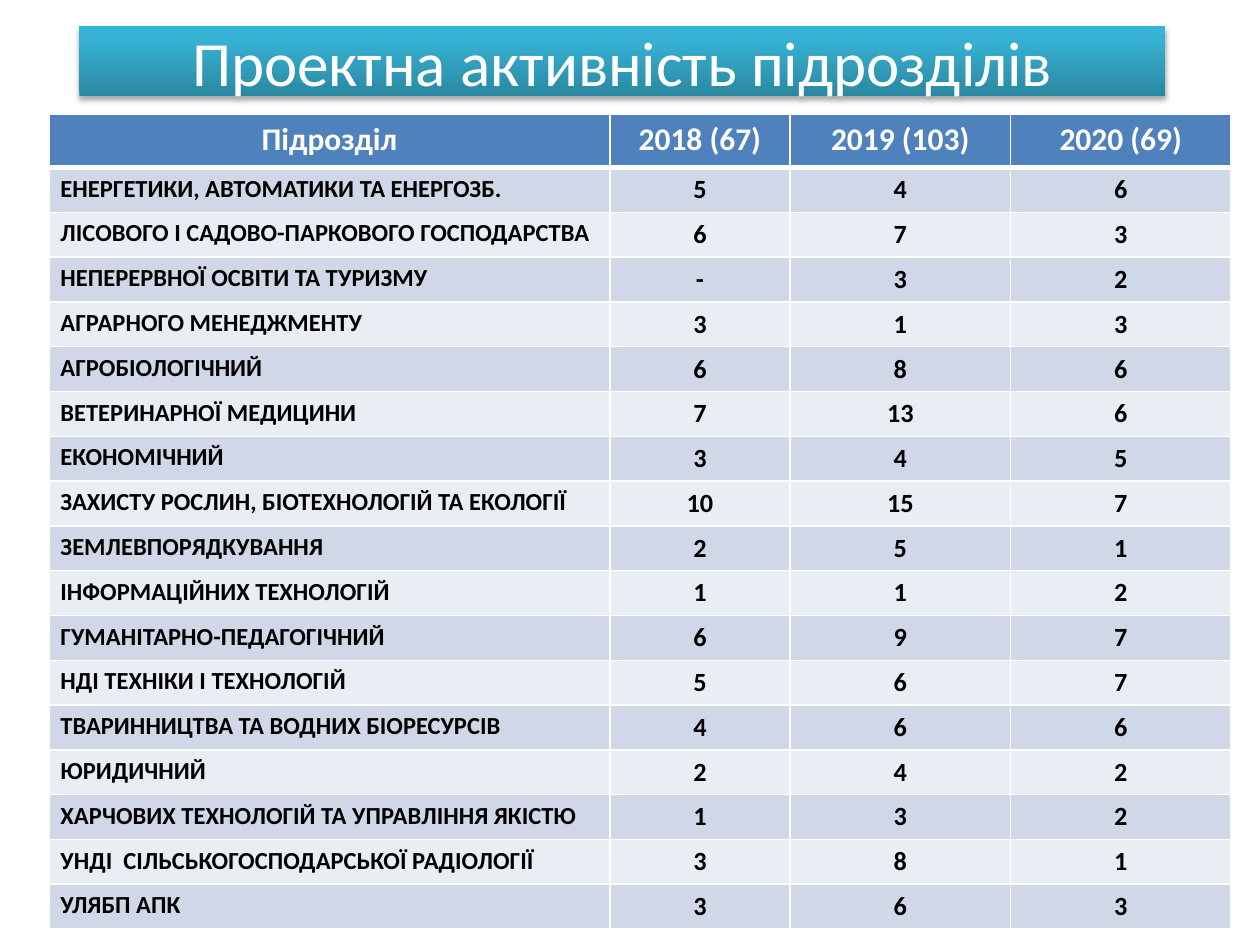
from lxml import etree
from pptx import Presentation
from pptx.dml.color import RGBColor
from pptx.enum import shapes, text
from pptx.oxml.ns import nsdecls, qn
from pptx.util import Inches, Pt

WHITE = RGBColor(0xFF, 0xFF, 0xFF)
BLACK = RGBColor(0x00, 0x00, 0x00)
HEADER = RGBColor(0x4F, 0x81, 0xBD)
BANDS = [RGBColor(0xD0, 0xD8, 0xE8), RGBColor(0xE9, 0xED, 0xF4)]
TEAL_STOPS = [
    (0, RGBColor(0x2A, 0x88, 0xA2)),
    (80, RGBColor(0x37, 0xB1, 0xD2)),
    (100, RGBColor(0x34, 0xB4, 0xD6)),
]

COLUMNS = [("Підрозділ", 4.45), ("2018 (67)", 1.43), ("2019 (103)", 1.75), ("2020 (69)", 1.75)]
UNITS = [
    ("ЕНЕРГЕТИКИ, АВТОМАТИКИ ТА ЕНЕРГОЗБ.", 5, 4, 6),
    ("ЛІСОВОГО І САДОВО-ПАРКОВОГО ГОСПОДАРСТВА", 6, 7, 3),
    ("НЕПЕРЕРВНОЇ ОСВІТИ ТА ТУРИЗМУ", "-", 3, 2),
    ("АГРАРНОГО МЕНЕДЖМЕНТУ", 3, 1, 3),
    ("АГРОБІОЛОГІЧНИЙ", 6, 8, 6),
    ("ВЕТЕРИНАРНОЇ МЕДИЦИНИ", 7, 13, 6),
    ("ЕКОНОМІЧНИЙ", 3, 4, 5),
    ("ЗАХИСТУ РОСЛИН, БІОТЕХНОЛОГІЙ ТА ЕКОЛОГІЇ", 10, 15, 7),
    ("ЗЕМЛЕВПОРЯДКУВАННЯ", 2, 5, 1),
    ("ІНФОРМАЦІЙНИХ ТЕХНОЛОГІЙ", 1, 1, 2),
    ("ГУМАНІТАРНО-ПЕДАГОГІЧНИЙ", 6, 9, 7),
    ("НДІ ТЕХНІКИ І ТЕХНОЛОГІЙ", 5, 6, 7),
    ("ТВАРИННИЦТВА ТА ВОДНИХ БІОРЕСУРСІВ", 4, 6, 6),
    ("ЮРИДИЧНИЙ", 2, 4, 2),
    ("ХАРЧОВИХ ТЕХНОЛОГІЙ ТА УПРАВЛІННЯ ЯКІСТЮ", 1, 3, 2),
    ("УНДІ  СІЛЬСЬКОГОСПОДАРСЬКОЇ РАДІОЛОГІЇ", 3, 8, 1),
    ("УЛЯБП АПК", 3, 6, 3),
]


def write(tf, content, size, color, bold=False, align=text.PP_ALIGN.CENTER):
    p = tf.paragraphs[0]
    p.alignment = align
    r = p.add_run()
    r.text = str(content)
    r.font.name = "Calibri"
    r.font.size = Pt(size)
    r.font.bold = bold
    r.font.color.rgb = color


def set_borders(cell, **widths):
    """Draw white cell borders; widths maps L, R, T, B to points."""
    tcPr = cell._tc.get_or_add_tcPr()
    for i, (side, width) in enumerate(widths.items()):
        tcPr.insert(i, etree.fromstring(
            f'<a:ln{side} {nsdecls("a")} w="{Pt(width)}"><a:solidFill>'
            f'<a:srgbClr val="{WHITE}"/></a:solidFill></a:ln{side}>'))


prs = Presentation()
prs.slide_width, prs.slide_height = Inches(10), Inches(7.5)
s = prs.slides.add_slide(prs.slide_layouts[6])

# Title bar
sp = s.shapes.add_shape(shapes.MSO_SHAPE.RECTANGLE,
                        Inches(0.63), Inches(0.21), Inches(8.62), Inches(0.55))
sp.line.fill.background()
sp.shadow.inherit = False
spPr = sp._element.spPr
stops = "".join(f'<a:gs pos="{pos * 1000}"><a:srgbClr val="{color}"/></a:gs>'
                for pos, color in TEAL_STOPS)
spPr.find(qn("a:prstGeom")).addnext(etree.fromstring(
    f'<a:gradFill {nsdecls("a")}><a:gsLst>{stops}</a:gsLst>'
    '<a:lin ang="16200000" scaled="0"/></a:gradFill>'))
spPr.find(qn("a:effectLst")).append(etree.fromstring(
    f'<a:outerShdw {nsdecls("a")} blurRad="{Pt(3.1)}" dist="{Pt(1.8)}" dir="5400000" '
    f'rotWithShape="0"><a:srgbClr val="{BLACK}"><a:alpha val="35000"/></a:srgbClr></a:outerShdw>'))
tf = sp.text_frame
tf.word_wrap = True
tf.vertical_anchor = text.MSO_ANCHOR.MIDDLE
write(tf, "Проектна активність підрозділів", 36, WHITE)

# Project counts by unit and year
table = s.shapes.add_table(len(UNITS) + 1, len(COLUMNS),
                           Inches(0.39), Inches(0.91), Inches(9.38), Inches(6.2)).table
for col, (_, width) in zip(table.columns, COLUMNS):
    col.width = Inches(width)

rows = [[label for label, _ in COLUMNS]] + UNITS
for i, values in enumerate(rows):
    header = i == 0
    table.rows[i].height = Inches(0.42 if header else 0.34)
    for j, value in enumerate(values):
        cell = table.cell(i, j)
        cell.margin_left = cell.margin_right = Inches(0.09)
        cell.margin_top = cell.margin_bottom = Inches(0.05)
        cell.fill.solid()
        cell.fill.fore_color.rgb = HEADER if header else BANDS[(i - 1) % 2]
        set_borders(cell, L=1, R=1, T=3 if i == 1 else 1, B=3 if header else 1)
        if header:
            write(cell.text_frame, value, 18, WHITE, bold=True)
        elif j == 0:
            write(cell.text_frame, value, 14, BLACK, bold=True, align=text.PP_ALIGN.LEFT)
        else:
            write(cell.text_frame, value, 15, BLACK, bold=True)

prs.save("out.pptx")
